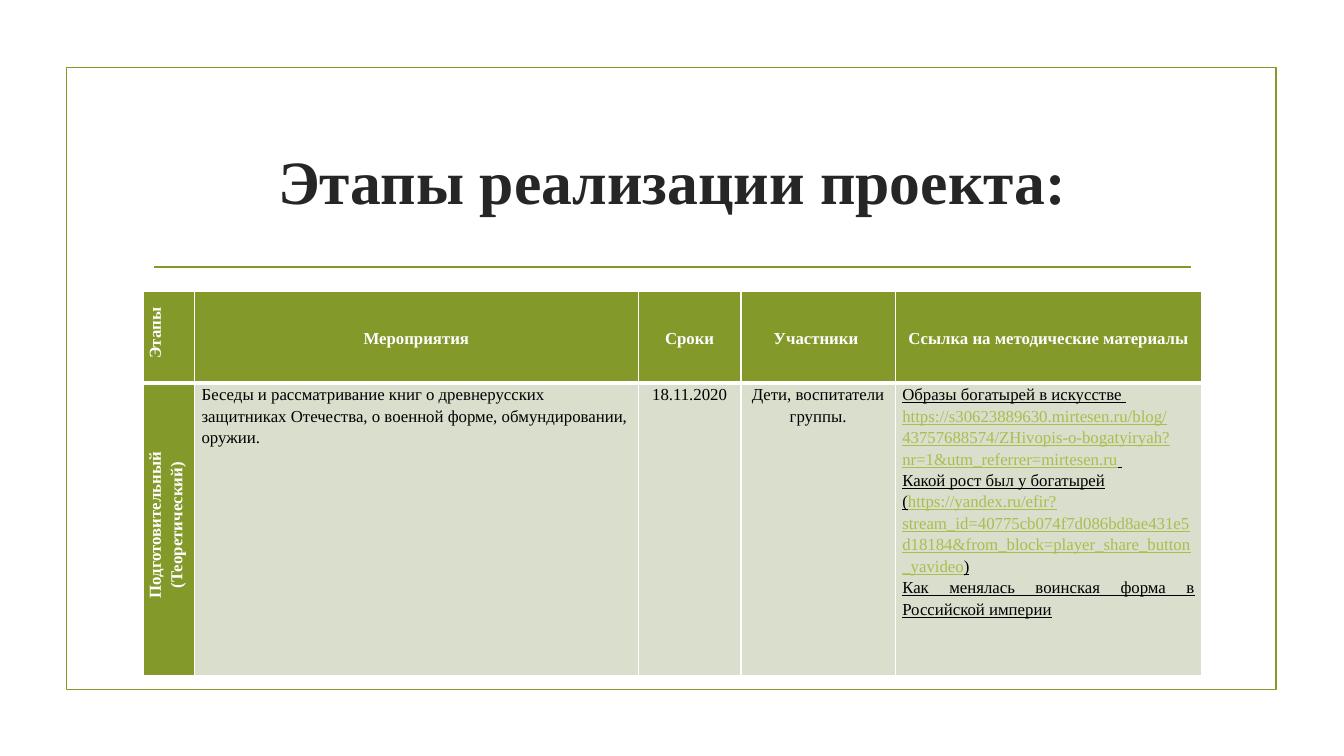
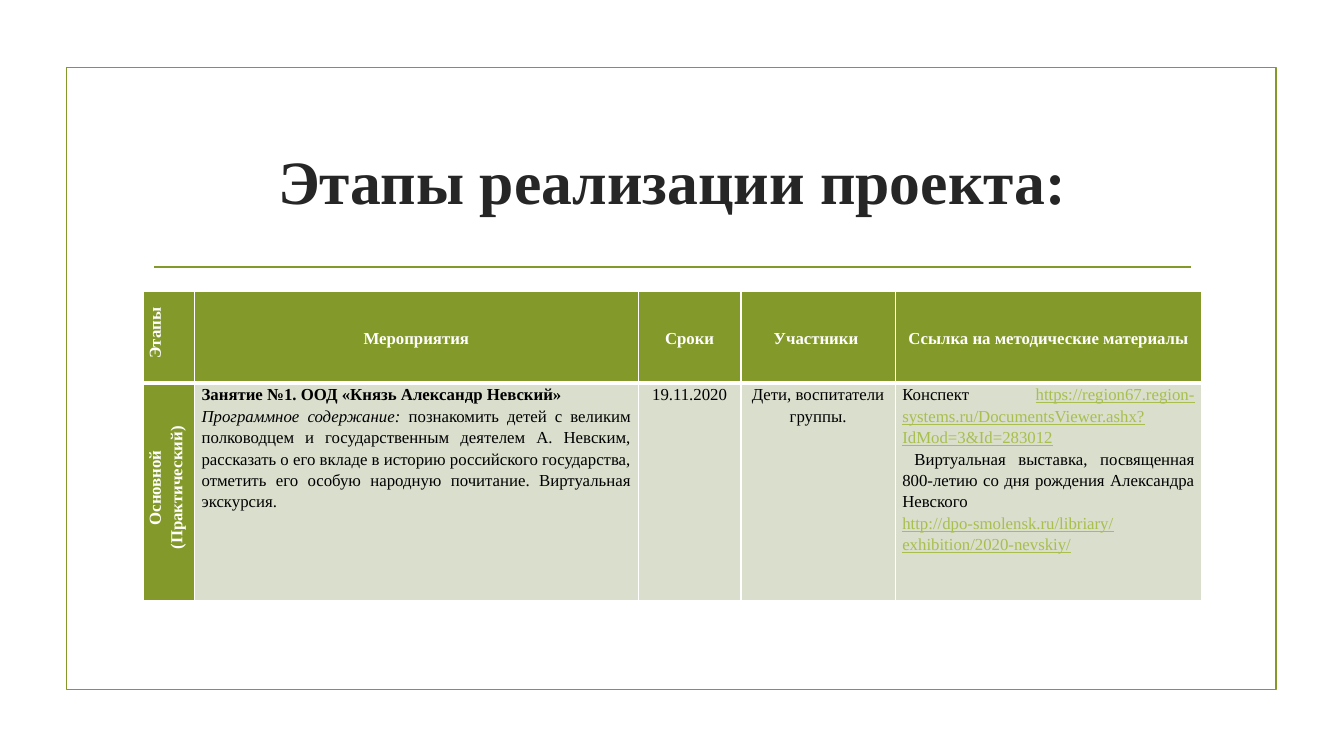
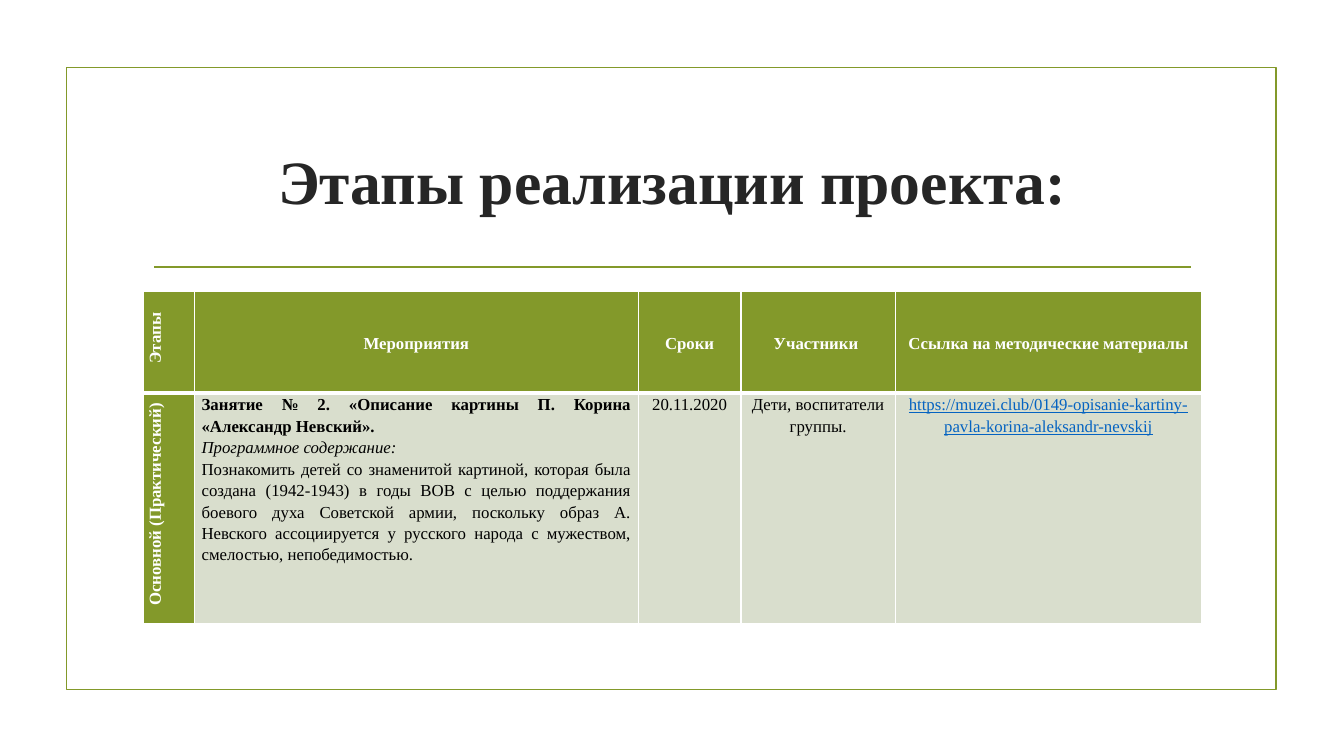
from typing import NamedTuple

from lxml import etree
from pptx import Presentation, util as u
from pptx.dml.color import RGBColor
from pptx.enum import shapes, text
from pptx.oxml.ns import qn

FONT = "Times New Roman"
OLIVE, PALE, WHITE = "83992A", "D9DECD", "FFFFFF"
BLACK, DARK, LIME, BLUE = "000000", "262626", "A8BF4D", "0563C1"
LEFT, WIDTH = 1.42, 10.5
COLS = (0.51, 4.4, 1.02, 1.53, 3.04)
THIN, THICK = 1, 3
MID, JUST, START = text.PP_ALIGN.CENTER, text.PP_ALIGN.JUSTIFY, text.PP_ALIGN.LEFT


class Run(NamedTuple):
    txt: str
    ink: str = BLACK
    bold: bool = False
    slant: bool = False
    under: bool = False


class Para(NamedTuple):
    runs: tuple[Run, ...]
    align: text.PP_ALIGN = JUST
    margin: float = 0
    indent: float = 0


class Stage(NamedTuple):
    name: str
    tasks: tuple[Para, ...]
    date: str
    links: tuple[Para, ...]
    rows: tuple[float, float]


def link(url: str, ink: str = LIME) -> Run:
    return Run(url, ink, under=True)


def lined(txt: str) -> Run:
    return Run(txt, under=True)


def head(txt: str, margin: float = 0) -> tuple[Para, ...]:
    return (Para((Run(txt, WHITE, bold=True),), MID, margin),)


def note(txt: str) -> tuple[Para, ...]:
    return (Para((Run(txt),), MID),)


HEADS = ("Мероприятия", "Сроки", "Участники ", "Ссылка на методические материалы")

STAGES = (
    Stage(
        "Подготовительный (Теоретический)",
        (Para((Run("Беседы и рассматривание книг о древнерусских защитниках Отечества, "
                   "о военной форме, обмундировании, оружии."),), START),),
        "18.11.2020",
        (
            Para((lined("Образы богатырей в искусстве "),)),
            Para((link("https://s30623889630.mirtesen.ru/blog/43757688574/"
                       "ZHivopis-o-bogatyiryah?nr=1&utm_referrer=mirtesen.ru"), lined(" "))),
            Para((lined("Какой рост был у богатырей"),)),
            Para((lined("("),
                  link("https://yandex.ru/efir?stream_id=40775cb074f7d086bd8ae431e5d18184"
                       "&from_block=player_share_button_yavideo"),
                  lined(")"))),
            Para((lined("Как менялась воинская форма в Российской империи"),)),
        ),
        (0.91, 2.9),
    ),
    Stage(
        "Основной (Практический)",
        (
            Para((Run("Занятие №1. ООД «Князь Александр Невский»", bold=True),)),
            Para((Run("Программное содержание:", slant=True),
                  Run(" познакомить детей с великим полководцем и государственным деятелем "
                      "А. Невским, рассказать о его вкладе в историю российского государства, "
                      "отметить его особую народную почитание. Виртуальная экскурсия."))),
        ),
        "19.11.2020",
        (
            Para((Run("Конспект "),
                  link("https://region67.region-systems.ru/DocumentsViewer.ashx?IdMod=3&Id=283012"))),
            Para((Run("Виртуальная выставка, посвященная 800-летию со дня рождения "
                      "Александра Невского"),), indent=0.12),
            Para((link("http://dpo-smolensk.ru/libriary/exhibition/2020-nevskiy/"),)),
        ),
        (0.91, 2.16),
    ),
    Stage(
        "Основной (Практический)",
        (
            Para((Run("Занятие № 2. «Описание картины П. Корина «Александр Невский».", bold=True),)),
            Para((Run("Программное содержание:", slant=True),)),
            Para((Run("Познакомить детей со знаменитой картиной, которая была создана (1942-1943) "
                      "в годы ВОВ с целью поддержания боевого духа Советской армии, поскольку образ "
                      "А. Невского ассоциируется у русского народа с мужеством, смелостью, "
                      "непобедимостью."),)),
        ),
        "20.11.2020",
        (Para((link("https://muzei.club/0149-opisanie-kartiny-pavla-korina-aleksandr-nevskij",
                    BLUE),), MID),),
        (1.01, 2.29),
    ),
)


def tint(code: str) -> RGBColor:
    return RGBColor.from_string(code)


def style(font, size: float, ink: str, bold: bool) -> None:
    font.name, font.size, font.bold = FONT, u.Pt(size), bold
    font.color.rgb = tint(ink)


def base(slide) -> None:
    frame = slide.shapes.add_shape(shapes.MSO_SHAPE.RECTANGLE, u.Inches(0.66), u.Inches(0.67),
                                   u.Inches(12), u.Inches(6.17))
    frame.shadow.inherit = False
    frame.fill.background()
    rule = slide.shapes.add_connector(shapes.MSO_CONNECTOR.STRAIGHT, u.Inches(1.53), u.Inches(2.65),
                                      u.Inches(11.81), u.Inches(2.65))
    etree.SubElement(rule._element.spPr, qn("a:effectLst"))
    for item in (frame, rule):
        item.line.color.rgb = tint(OLIVE)
        item.line.width = u.Pt(1.25)


def title(slide, txt: str) -> None:
    box = slide.shapes.add_textbox(u.Inches(LEFT), u.Inches(1.07), u.Inches(WIDTH), u.Inches(1.43))
    body = box.text_frame
    body.word_wrap = True
    body.vertical_anchor = text.MSO_ANCHOR.MIDDLE
    body.text = txt
    para = body.paragraphs[0]
    para.alignment = MID
    style(para.runs[0].font, 44, DARK, True)


def edge(cell, top: int, base: int) -> None:
    props = cell._tc.get_or_add_tcPr()
    sides = (("lnL", THIN), ("lnR", THIN), ("lnT", top), ("lnB", base))
    for spot, (tag, width) in enumerate(sides):
        line = etree.Element(qn(f"a:{tag}"), w=str(u.Pt(width)))
        fill = etree.SubElement(line, qn("a:solidFill"))
        etree.SubElement(fill, qn("a:srgbClr"), val=WHITE)
        props.insert(spot, line)


def write(cell, paras: tuple[Para, ...]) -> None:
    body = cell.text_frame
    for num, item in enumerate(paras):
        para = body.add_paragraph() if num else body.paragraphs[0]
        para.alignment, para.line_spacing = item.align, 1.15
        props = para._p.get_or_add_pPr()
        props.set("marL", str(u.Inches(item.margin)))
        props.set("indent", str(u.Inches(item.indent)))
        for part in item.runs:
            run = para.add_run()
            run.text = part.txt
            style(run.font, 12, part.ink, part.bold)
            run.font.italic, run.font.underline = part.slant, part.under


def grid(slide, stage: Stage) -> None:
    table = slide.shapes.add_table(2, len(COLS), u.Inches(LEFT), u.Inches(2.89), u.Inches(WIDTH),
                                   u.Inches(sum(stage.rows))).table
    table.first_row = table.horz_banding = False
    for col, width in zip(table.columns, COLS):
        col.width = u.Inches(width)
    for row, height in zip(table.rows, stage.rows):
        row.height = u.Inches(height)
    cells = (
        (head("Этапы", 0.08), *map(head, HEADS)),
        (head(stage.name, 0.08), stage.tasks, note(stage.date),
         note("Дети, воспитатели группы."), stage.links),
    )
    for r, line in enumerate(cells):
        for c, paras in enumerate(line):
            cell = table.cell(r, c)
            cell.margin_left = cell.margin_right = u.Inches(0.07)
            cell.margin_top = cell.margin_bottom = 0
            cell.fill.solid()
            cell.fill.fore_color.rgb = tint(PALE if r and c else OLIVE)
            edge(cell, THICK if r else THIN, THIN if r else THICK)
            if c == 0:
                cell._tc.get_or_add_tcPr().set("vert", "vert270")
            elif r == 0:
                cell.vertical_anchor = text.MSO_ANCHOR.MIDDLE
            write(cell, paras)


def main() -> None:
    deck = Presentation()
    deck.slide_width, deck.slide_height = u.Inches(13.33), u.Inches(7.5)
    for stage in STAGES:
        slide = deck.slides.add_slide(deck.slide_layouts[6])
        base(slide)
        title(slide, "Этапы реализации проекта:")
        grid(slide, stage)
    deck.save("out.pptx")


if __name__ == "__main__":
    main()
